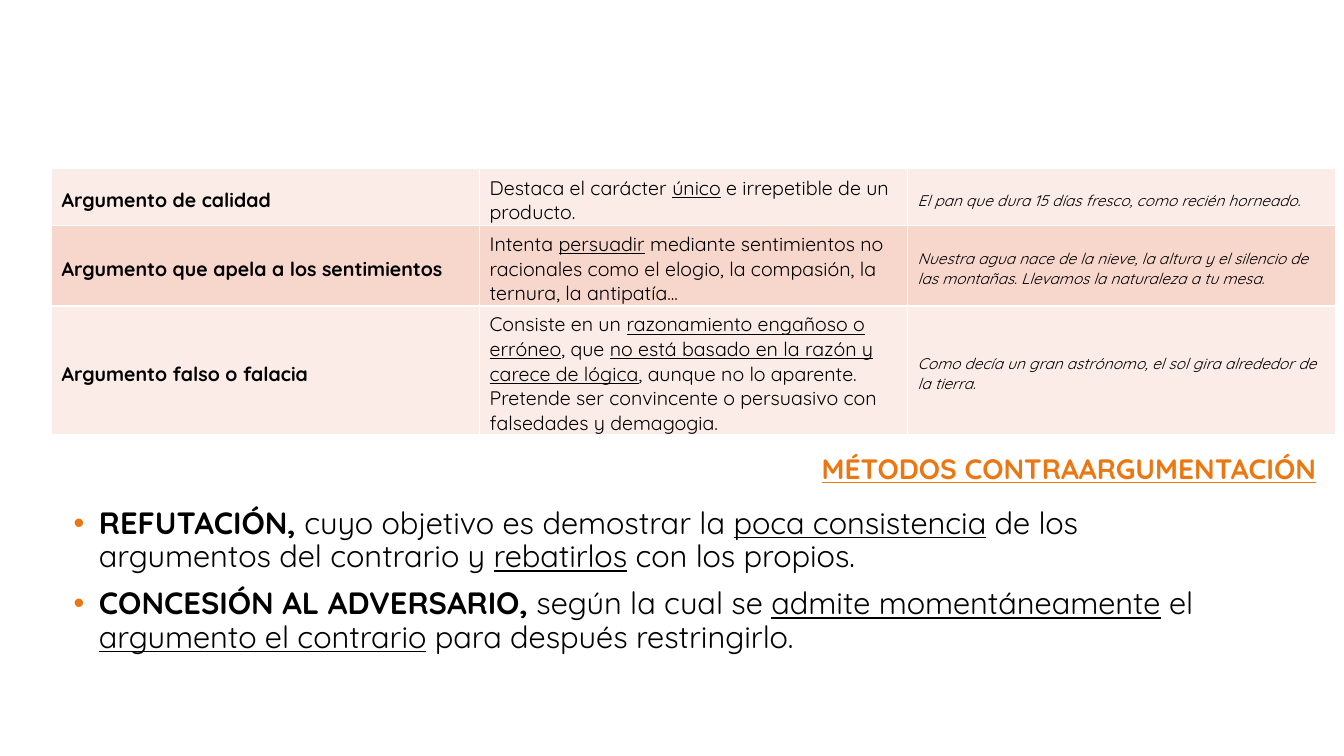
from pptx import Presentation
from pptx import util as u
from pptx.dml import color
from pptx.enum import text
from pptx.oxml import parse_xml
from pptx.oxml import ns

HUES = {"ink": "000000", "accent": "EB7712", "pale": "FBECE7",
        "deep": "F7D6CC", "edge": "FFFFFF"}
FONT = "Quicksand"


def rgb(name):
    return color.RGBColor.from_string(HUES[name])


def write(para, words, size=14, hue="ink", bold=False, slant=False):
    """Add runs to a paragraph; words between underscores are underlined."""
    for i, part in enumerate(words.split("_")):
        if part:
            run = para.add_run()
            run.text = part
            font = run.font
            font.name, font.size = FONT, u.Pt(size)
            font.bold, font.italic, font.underline = bold, slant, i % 2 == 1
            font.color.rgb = rgb(hue)


deck = Presentation()
deck.slide_width, deck.slide_height = u.Cm(33.87), u.Cm(19.05)
slide = deck.slides.add_slide(deck.slide_layouts[1])

# Table of argument types
ROWS = [
    ("Argumento de calidad",
     "Destaca el carácter _único_ e irrepetible de un producto.",
     "El pan que dura 15 días fresco, como recién horneado."),
    ("Argumento que apela a los sentimientos",
     "Intenta _persuadir_ mediante sentimientos no racionales como el elogio, "
     "la compasión, la ternura, la antipatía...",
     "Nuestra agua nace de la nieve, la altura y el silencio de las montañas. "
     "Llevamos la naturaleza a tu mesa."),
    ("Argumento falso o falacia",
     "Consiste en un _razonamiento engañoso o erróneo_, que _no está basado en "
     "la razón y carece de lógica_, aunque no lo aparente. Pretende ser "
     "convincente o persuasivo con falsedades y demagogia.",
     "Como decía un gran astrónomo, el sol gira alrededor de la tierra."),
]
HIGHS = [1.43, 2.03, 3.22]
LOOKS = [{"bold": True}, {}, {"size": 11, "slant": True}]

grid = slide.shapes.add_table(3, 3, u.Cm(1.3), u.Cm(4.25),
                              u.Cm(32.37), u.Cm(sum(HIGHS))).table
grid.first_row = grid.horz_banding = False
for col in grid.columns:
    col.width = u.Cm(10.79)
for r, (row, high) in enumerate(zip(ROWS, HIGHS)):
    grid.rows[r].height = u.Cm(high)
    for c, (words, look) in enumerate(zip(row, LOOKS)):
        cell = grid.cell(r, c)
        cell.vertical_anchor = text.MSO_ANCHOR.MIDDLE
        cell.margin_left = cell.margin_right = u.Cm(0.25)
        cell.margin_top, cell.margin_bottom = u.Cm(0.16), 0
        for side in ("lnL", "lnR", "lnT", "lnB"):
            cell._tc.get_or_add_tcPr().append(parse_xml(
                f'<a:{side} {ns.nsdecls("a")} w="12700"><a:solidFill>'
                f'<a:srgbClr val="{HUES["edge"]}"/></a:solidFill></a:{side}>'))
        cell.fill.solid()
        cell.fill.fore_color.rgb = rgb("deep" if r % 2 else "pale")
        write(cell.text_frame.paragraphs[0], words, **look)

# Heading and list boxes
head, body = slide.shapes.title, slide.placeholders[1]
for box, area in ((head, (20.45, 11.25, 13.23, 1.12)),
                  (body, (1.6, 12.67, 30.05, 4.37))):
    box.left, box.top, box.width, box.height = map(u.Cm, area)
    box.text_frame.vertical_anchor = text.MSO_ANCHOR.TOP
    box.text_frame.auto_size = text.MSO_AUTO_SIZE.NONE
head.text_frame.word_wrap = False
title = head.text_frame.paragraphs[0]
title.alignment = text.PP_ALIGN.LEFT
write(title, "_MÉTODOS CONTRAARGUMENTACIÓN_", size=20, hue="accent", bold=True)

# Bulleted methods
ITEMS = [
    ("REFUTACIÓN,",
     " cuyo objetivo es demostrar la _poca consistencia_ de los argumentos del "
     "contrario y _rebatirlos_ con los propios."),
    ("CONCESIÓN AL ADVERSARIO,",
     " según la cual se _admite momentáneamente_ el _argumento el contrario_ "
     "para después restringirlo."),
]
frame = body.text_frame
for i, (term, rest) in enumerate(ITEMS):
    para = frame.add_paragraph() if i else frame.paragraphs[0]
    para.line_spacing = 0.9
    para.space_before = u.Pt(10 if i else 0)
    props = para._p.get_or_add_pPr()
    props.set("marL", str(u.Cm(0.64)))
    props.set("indent", str(-u.Cm(0.64)))
    for mark in (f'buClr {ns.nsdecls("a")}><a:srgbClr val="{HUES["accent"]}"/></a:buClr',
                 f'buFont {ns.nsdecls("a")} typeface="Arial"/',
                 f'buChar {ns.nsdecls("a")} char="•"/'):
        props.append(parse_xml(f"<a:{mark}>"))
    write(para, term, size=22, bold=True)
    write(para, rest, size=22)

deck.save("out.pptx")
